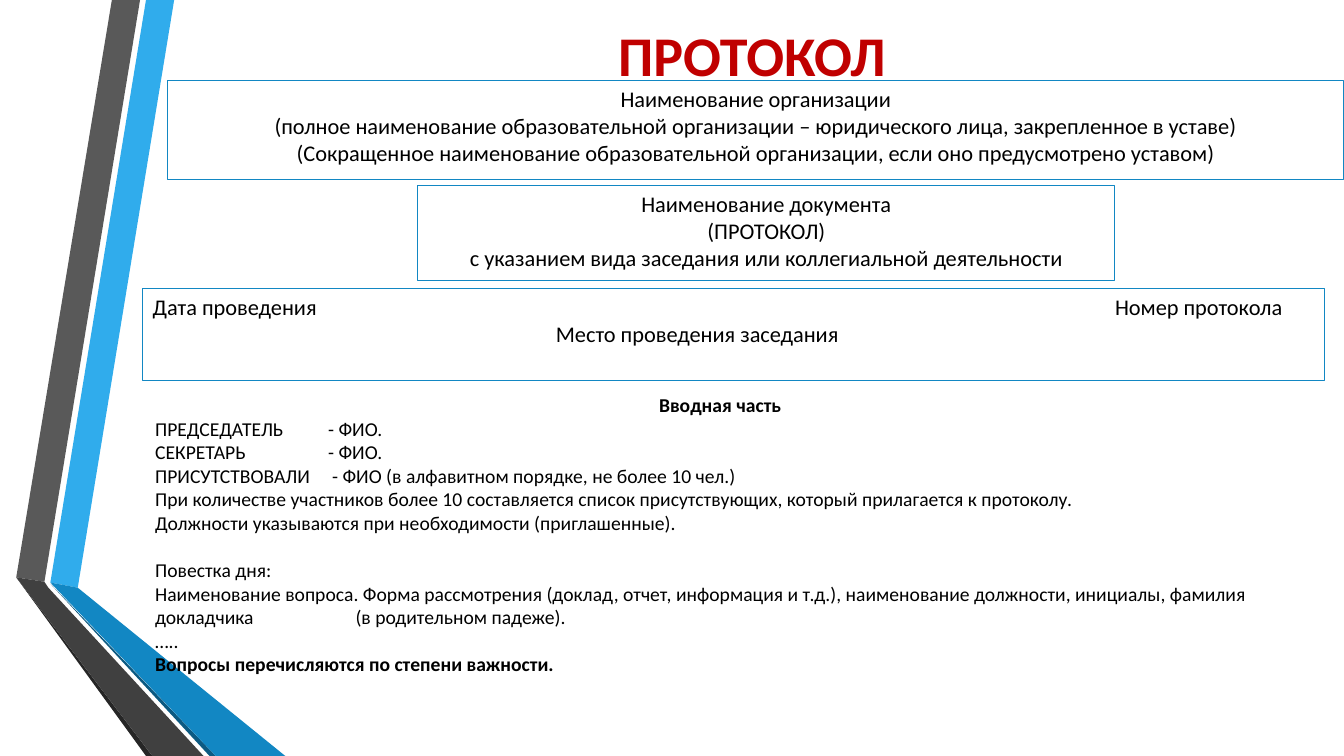
import pptx
import pptx.util
from dataclasses import dataclass
from lxml import etree
from pptx.dml.color import RGBColor
from pptx.enum.shapes import MSO_SHAPE
from pptx.enum.text import MSO_ANCHOR, MSO_AUTO_SIZE, PP_ALIGN
from pptx.oxml.ns import qn
from pptx.util import Cm, Pt


@dataclass(frozen=True)
class Theme:
    font: str = "Calibri"
    title_size: int = 40
    box_size: int = 16
    body_size: int = 14
    title: str = "C00000"
    text: str = "000000"
    sky: str = "30ACEC"
    blue: str = "1287C3"
    navy: str = "0C5A82"
    grey: str = "595959"
    charcoal: str = "404040"
    black: str = "262626"


theme = Theme()


def style(paragraph, size, color=theme.text, bold=False, align=PP_ALIGN.LEFT):
    paragraph.alignment = align
    paragraph.font.name = theme.font
    paragraph.font.size = Pt(size)
    paragraph.font.bold = bold
    paragraph.font.color.rgb = RGBColor.from_string(color)


def add_tab_stop(paragraph, position):
    """Put one left tab stop, position in cm, on a paragraph without other stops."""
    properties = paragraph._p.get_or_add_pPr()
    stops = etree.SubElement(properties, qn("a:tabLst"))
    etree.SubElement(stops, qn("a:tab"), pos=str(Cm(position)), algn="l")


presentation = pptx.Presentation()
presentation.slide_width = Cm(33.87)
presentation.slide_height = Cm(19.05)
slide = presentation.slides.add_slide(presentation.slide_layouts[5])

# Folded ribbons along the left edge, outlines in cm
ribbons = [
    (theme.sky, [(1.27, 14.68), (1.96, 14.81), (4.39, 0), (3.68, 0)]),
    (theme.grey, [(3.53, 0), (2.82, 0), (0.41, 14.55), (1.12, 14.66)]),
    (theme.black, [(0.41, 14.55), (3.68, 19.05), (3.84, 19.05)]),
    (theme.navy, [(1.27, 14.71), (5.28, 19.05), (5.44, 19.05)]),
    (theme.blue, [(1.27, 14.68), (5.44, 19.05), (7.19, 19.05), (1.96, 14.81)]),
    (theme.charcoal, [(5.13, 19.05), (1.22, 14.81), (1.12, 14.66),
                      (0.41, 14.55), (3.84, 19.05)]),
]
for color, outline in ribbons:
    corners = [(Cm(x), Cm(y)) for x, y in outline]
    builder = slide.shapes.build_freeform(*corners[0])
    builder.add_line_segments(corners[1:], close=True)
    ribbon = builder.convert_to_shape()
    ribbon.shadow.inherit = False
    ribbon.fill.solid()
    ribbon.fill.fore_color.rgb = RGBColor.from_string(color)
    ribbon.line.fill.background()

title = slide.shapes.title
title.left, title.top, title.width, title.height = Cm(5.03), Cm(0), Cm(27.84), Cm(2.74)
title.text_frame.text = "ПРОТОКОЛ"
title.text_frame.auto_size = MSO_AUTO_SIZE.NONE
title.text_frame.vertical_anchor = MSO_ANCHOR.MIDDLE
style(title.text_frame.paragraphs[0], theme.title_size, theme.title, True, PP_ALIGN.CENTER)

# Framed requisites: left, top, width, height in cm, alignment, (line, tab stop)
requisites = [
    (4.23, 2.03, 29.64, 2.5, PP_ALIGN.CENTER, [
        ("Наименование организации", None),
        ("(полное наименование образовательной организации – юридического лица, "
         "закрепленное в уставе)", None),
        ("(Сокращенное наименование образовательной организации, "
         "если оно предусмотрено уставом)", None),
    ]),
    (10.53, 4.67, 17.57, 2.4, PP_ALIGN.CENTER, [
        ("Наименование документа", None),
        ("(ПРОТОКОЛ)", None),
        ("с указанием вида заседания или коллегиальной деятельности", None),
    ]),
    (3.6, 7.27, 29.77, 2.32, PP_ALIGN.LEFT, [
        ("Дата проведения\tНомер протокола", 24.25),
        ("\tМесто проведения заседания", 10.16),
    ]),
]
for left, top, width, height, align, lines in requisites:
    box = slide.shapes.add_shape(
        MSO_SHAPE.RECTANGLE, Cm(left), Cm(top), Cm(width), Cm(height))
    box.shadow.inherit = False
    box.fill.background()
    box.line.color.rgb = RGBColor.from_string(theme.blue)
    box.line.width = Pt(0.75)
    frame = box.text_frame
    frame.word_wrap = True
    frame.vertical_anchor = MSO_ANCHOR.TOP
    frame.text = "\n".join(text for text, stop in lines)
    for paragraph, (text, stop) in zip(frame.paragraphs, lines):
        style(paragraph, theme.box_size, align=align)
        if stop:
            add_tab_stop(paragraph, stop)

# Body of the protocol: line, tab stop in cm, bold, space before in points
protocol = [
    ("\tВводная часть", 12.7, True, 0),
    ("ПРЕДСЕДАТЕЛЬ\t- ФИО.", 4.36, False, 0),
    ("СЕКРЕТАРЬ\t- ФИО.", 4.36, False, 0),
    ("ПРИСУТСТВОВАЛИ\t- ФИО (в алфавитном порядке, не более 10 чел.)", 4.46, False, 0),
    ("При количестве участников более 10 составляется список присутствующих, "
     "который прилагается к протоколу.", None, False, 0),
    ("Должности указываются при необходимости (приглашенные).", None, False, 0),
    ("Повестка дня:", None, False, 17),
    ("Наименование вопроса. Форма рассмотрения (доклад, отчет, информация и т.д.), "
     "наименование должности, инициалы, фамилия докладчика\t(в родительном падеже).",
     5.05, False, 0),
    ("…..", None, False, 0),
    ("Вопросы перечисляются по степени важности.", None, True, 0),
]
body = slide.shapes.add_textbox(Cm(3.66), Cm(9.78), Cm(29.72), Cm(8.03)).text_frame
body.word_wrap = True
body.text = "\n".join(line[0] for line in protocol)
for paragraph, (text, stop, bold, space) in zip(body.paragraphs, protocol):
    style(paragraph, theme.body_size, bold=bold)
    paragraph.space_before = Pt(space)
    if stop:
        add_tab_stop(paragraph, stop)

presentation.save("out.pptx")
